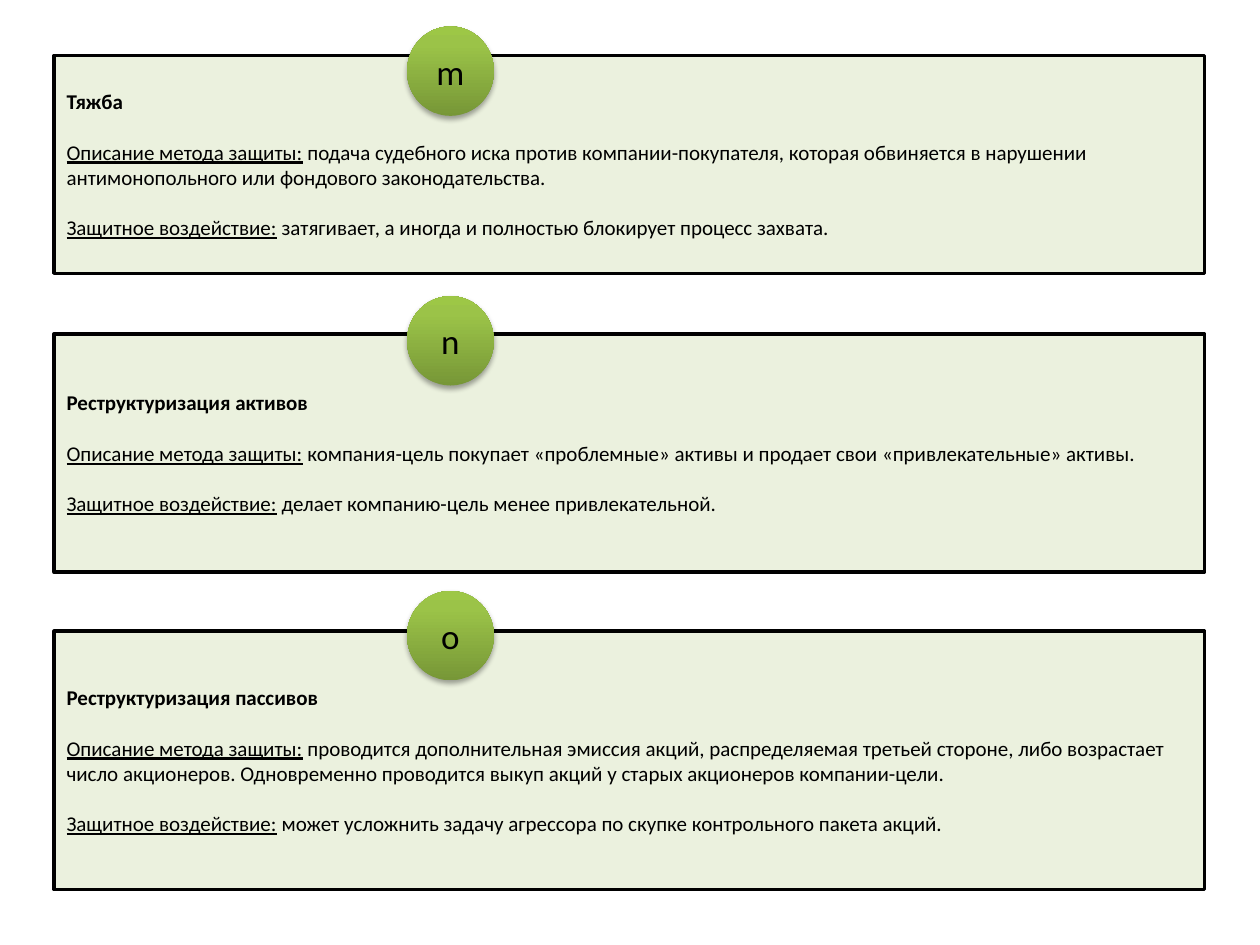
import pptx
import pptx.dml.color
import pptx.enum.shapes
import pptx.enum.text
import pptx.oxml
import pptx.oxml.ns
import pptx.util
from pptx.util import Inches

SHAPE = pptx.enum.shapes.MSO_SHAPE
ALIGN = pptx.enum.text.PP_ALIGN
NS = pptx.oxml.ns.nsdecls("a")

METHODS = [
    ("m", 0.21, 0.44, 1.73, "Тяжба",
     "подача судебного иска против компании-покупателя, которая обвиняется "
     "в нарушении антимонопольного или фондового законодательства.",
     "затягивает, а иногда и полностью блокирует процесс захвата."),
    ("n", 2.35, 2.65, 1.89, "Реструктуризация активов",
     "компания-цель покупает «проблемные» активы и продает свои "
     "«привлекательные» активы.",
     "делает компанию-цель менее привлекательной."),
    ("o", 4.69, 5.01, 2.05, "Реструктуризация пассивов",
     "проводится дополнительная эмиссия акций, распределяемая третьей стороне, "
     "либо возрастает число акционеров. Одновременно проводится выкуп акций "
     "у старых акционеров компании-цели.",
     "может усложнить задачу агрессора по скупке контрольного пакета акций."),
]


def color(value):
    """Turn a hex string into a colour."""
    return pptx.dml.color.RGBColor.from_string(value)


def add_shape(slide, kind, left, top, width, height):
    """Add a shadowless preset shape with middle-anchored text."""
    sp = slide.shapes.add_shape(
        kind, Inches(left), Inches(top), Inches(width), Inches(height))
    sp.shadow.inherit = False
    sp.text_frame.word_wrap = True
    sp.text_frame.vertical_anchor = pptx.enum.text.MSO_ANCHOR.MIDDLE
    return sp


def add_run(p, text, size=12, bold=False, underline=False):
    """Append a black Calibri run to a paragraph."""
    r = p.add_run()
    r.text = text
    r.font.name = "Calibri"
    r.font.size = pptx.util.Pt(size)
    r.font.bold = bold
    r.font.underline = underline
    r.font.color.rgb = color("000000")


def add_panel(slide, top, height, title, description, effect):
    """Add a bordered panel with a title and two labelled paragraphs."""
    sp = add_shape(slide, SHAPE.RECTANGLE, 0.43, top, 9.13, height)
    sp.fill.solid()
    sp.fill.fore_color.rgb = color("EBF1DE")
    sp.line.color.rgb = color("000000")
    sp.line.width = pptx.util.Pt(2)
    tf = sp.text_frame
    p = tf.paragraphs[0]
    p.alignment = ALIGN.LEFT
    add_run(p, title, bold=True)
    for label, text in (("Описание метода защиты:", description),
                        ("Защитное воздействие:", effect)):
        p = tf.add_paragraph()
        p.alignment = ALIGN.LEFT
        p.space_before = pptx.util.Pt(14.4)
        add_run(p, label, underline=True)
        add_run(p, " " + text)


def add_badge(slide, top, letter):
    """Add a green gradient circle with a soft shadow and a letter."""
    sp = add_shape(slide, SHAPE.OVAL, 3.23, top, 0.69, 0.71)
    sp.line.fill.background()
    stops = "".join(
        f'<a:gs pos="{pos * 1000}"><a:srgbClr val="{value}"/></a:gs>'
        for pos, value in ((0, "779737"), (80, "9BC348"), (100, "9DC746")))
    gradient = pptx.oxml.parse_xml(
        f'<a:gradFill {NS} rotWithShape="1"><a:gsLst>{stops}</a:gsLst>'
        '<a:lin ang="16200000" scaled="0"/></a:gradFill>')
    shadow = pptx.oxml.parse_xml(
        f'<a:outerShdw {NS} blurRad="{pptx.util.Pt(3.1)}" '
        f'dist="{pptx.util.Pt(1.8)}" dir="5400000" rotWithShape="0">'
        '<a:srgbClr val="000000"><a:alpha val="35000"/></a:srgbClr>'
        '</a:outerShdw>')
    props = sp.element.spPr
    props.find(pptx.oxml.ns.qn("a:ln")).addprevious(gradient)
    props.find(pptx.oxml.ns.qn("a:effectLst")).append(shadow)
    p = sp.text_frame.paragraphs[0]
    p.alignment = ALIGN.CENTER
    add_run(p, letter, size=20)


def main():
    """Build the slide of defence methods and save it."""
    prs = pptx.Presentation()
    prs.slide_width = Inches(10)
    prs.slide_height = Inches(7.5)
    slide = prs.slides.add_slide(prs.slide_layouts[6])
    for letter, badge_top, top, height, title, description, effect in METHODS:
        add_panel(slide, top, height, title, description, effect)
        add_badge(slide, badge_top, letter)
    prs.save("out.pptx")


if __name__ == "__main__":
    main()
